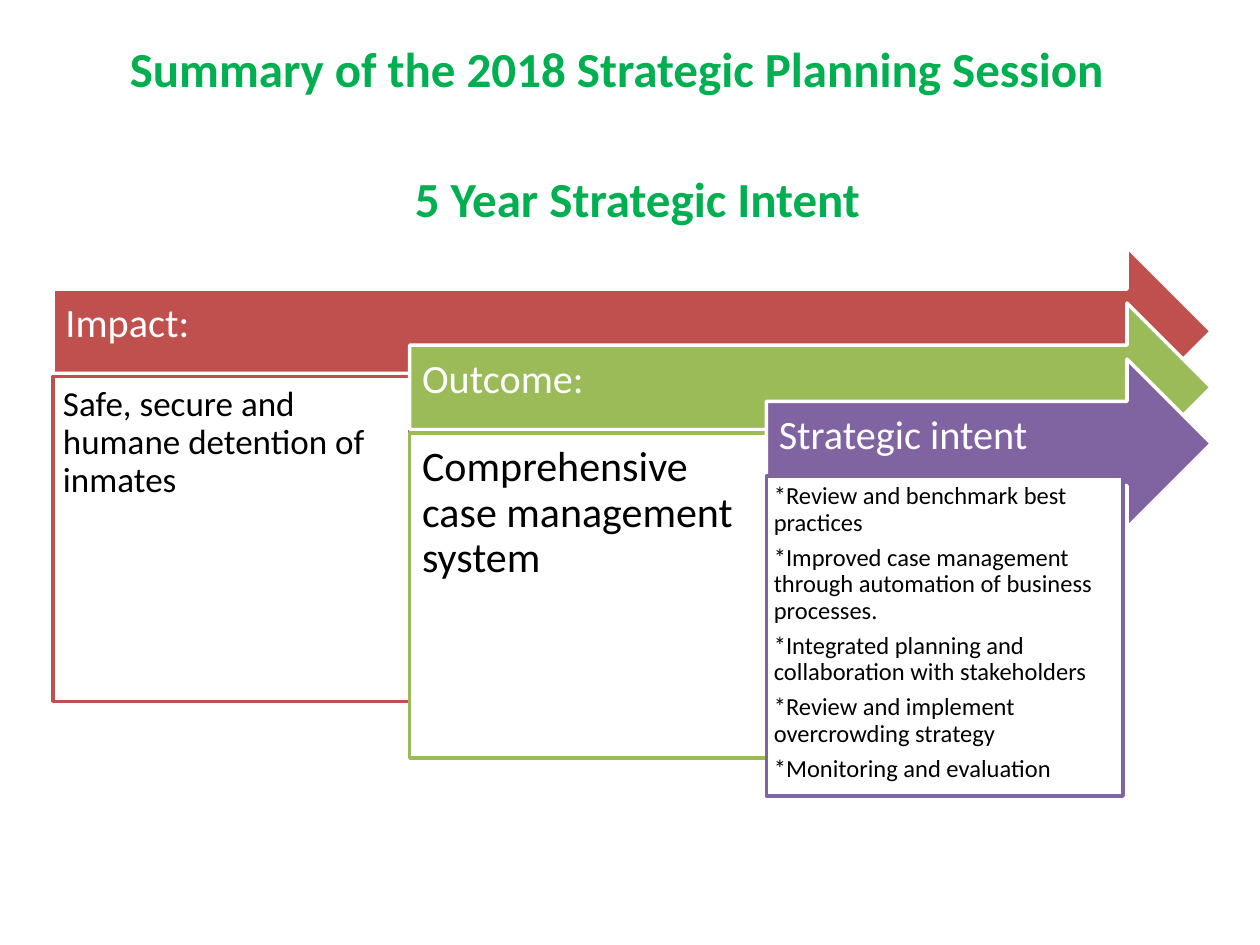
from pptx import Presentation
from pptx.dml.color import RGBColor
from pptx.enum.shapes import MSO_SHAPE
from pptx.enum.text import MSO_ANCHOR, PP_ALIGN
from pptx.util import Cm, Pt


def color(hex_value):
    return RGBColor.from_string(hex_value)


class StrategySlide:
    """Hold the slide and its style, and draw headings, arrows and detail boxes."""

    FONT = "Calibri"
    HEADING = "00B050"
    WHITE = "FFFFFF"
    BLACK = "000000"

    def __init__(self, presentation):
        self.slide = presentation.slides.add_slide(presentation.slide_layouts[5])

    def fill_text(self, shape, paragraphs, size, ink, insets, anchor, bold=False,
                  align=PP_ALIGN.LEFT, line_spacing=0.9, after=0.35):
        frame = shape.text_frame
        frame.word_wrap = True
        frame.vertical_anchor = anchor
        (frame.margin_left, frame.margin_top,
         frame.margin_right, frame.margin_bottom) = [Cm(inset) for inset in insets]
        for index, wording in enumerate(paragraphs):
            paragraph = frame.add_paragraph() if index else frame.paragraphs[0]
            paragraph.alignment = align
            paragraph.line_spacing = line_spacing
            paragraph.space_before = Pt(0)
            paragraph.space_after = Pt(round(size * after, 1))
            run = paragraph.add_run()
            run.text = wording
            run.font.name = self.FONT
            run.font.size = Pt(size)
            run.font.bold = bold
            run.font.color.rgb = color(ink)

    def heading(self, shape, wording):
        self.fill_text(shape, [wording], 28, self.HEADING, (0.25, 0.13, 0.25, 0.13),
                       MSO_ANCHOR.MIDDLE, True, PP_ALIGN.CENTER, 1.0, 0)

    def title(self, wording, left, top, width, height):
        title = self.slide.shapes.title
        title.left, title.top = Cm(left), Cm(top)
        title.width, title.height = Cm(width), Cm(height)
        self.heading(title, wording)

    def subtitle(self, wording, left, top, width, height):
        subtitle = self.slide.shapes.add_textbox(
            Cm(left), Cm(top), Cm(width), Cm(height))
        self.heading(subtitle, wording)

    def block(self, preset, left, top, width, height, fill, outline):
        block = self.slide.shapes.add_shape(
            preset, Cm(left), Cm(top), Cm(width), Cm(height))
        block.shadow.inherit = False
        block.fill.solid()
        block.fill.fore_color.rgb = color(fill)
        block.line.color.rgb = color(outline)
        block.line.width = Pt(2)
        return block

    def arrow(self, label, left, top, width, height, fill):
        arrow = self.block(MSO_SHAPE.RIGHT_ARROW, left, top, width, height,
                           fill, self.WHITE)
        self.fill_text(arrow, [label], 23, self.WHITE, (0.25, 0.25, 0.71, 0.53),
                       MSO_ANCHOR.MIDDLE)

    def detail(self, paragraphs, left, top, width, height, outline, size, inset):
        detail = self.block(MSO_SHAPE.RECTANGLE, left, top, width, height,
                            self.WHITE, outline)
        self.fill_text(detail, paragraphs, size, self.BLACK, (inset,) * 4,
                       MSO_ANCHOR.TOP)


def main():
    presentation = Presentation()
    presentation.slide_width, presentation.slide_height = Cm(25.4), Cm(19.05)
    slide = StrategySlide(presentation)
    slide.title("Summary of the 2018 Strategic Planning Session", 1, 0.3, 22.86, 2.13)

    stages = [
        ("Impact:", "C0504D", 20, 0.2, 7.59, 6.55,
         ["Safe, secure and humane detention of inmates"]),
        ("Outcome:", "9BBB59", 24, 0.25, 8.73, 6.55,
         ["Comprehensive case management system"]),
        ("Strategic intent", "8064A2", 14, 0.15, 9.6, 6.45,
         ["*Review and benchmark best practices",
          "*Improved case management through automation of business processes.",
          "*Integrated planning and collaboration with stakeholders",
          "*Review and implement overcrowding strategy",
          "*Monitoring and evaluation"]),
    ]
    first_left, first_top, tips = 1.07, 4.98, 24.42
    column, drop = 7.19, 1.13
    for index, stage in enumerate(stages):
        label, accent, size, inset, detail_top, detail_height, details = stage
        left = first_left + index * column
        slide.arrow(label, left, first_top + index * drop, tips - left, 3.4, accent)
        slide.detail(details, left, detail_top, column, detail_height,
                     accent, size, inset)

    slide.subtitle("5 Year Strategic Intent", 1.42, 2.92, 22.86, 2.13)
    presentation.save("out.pptx")


if __name__ == "__main__":
    main()
